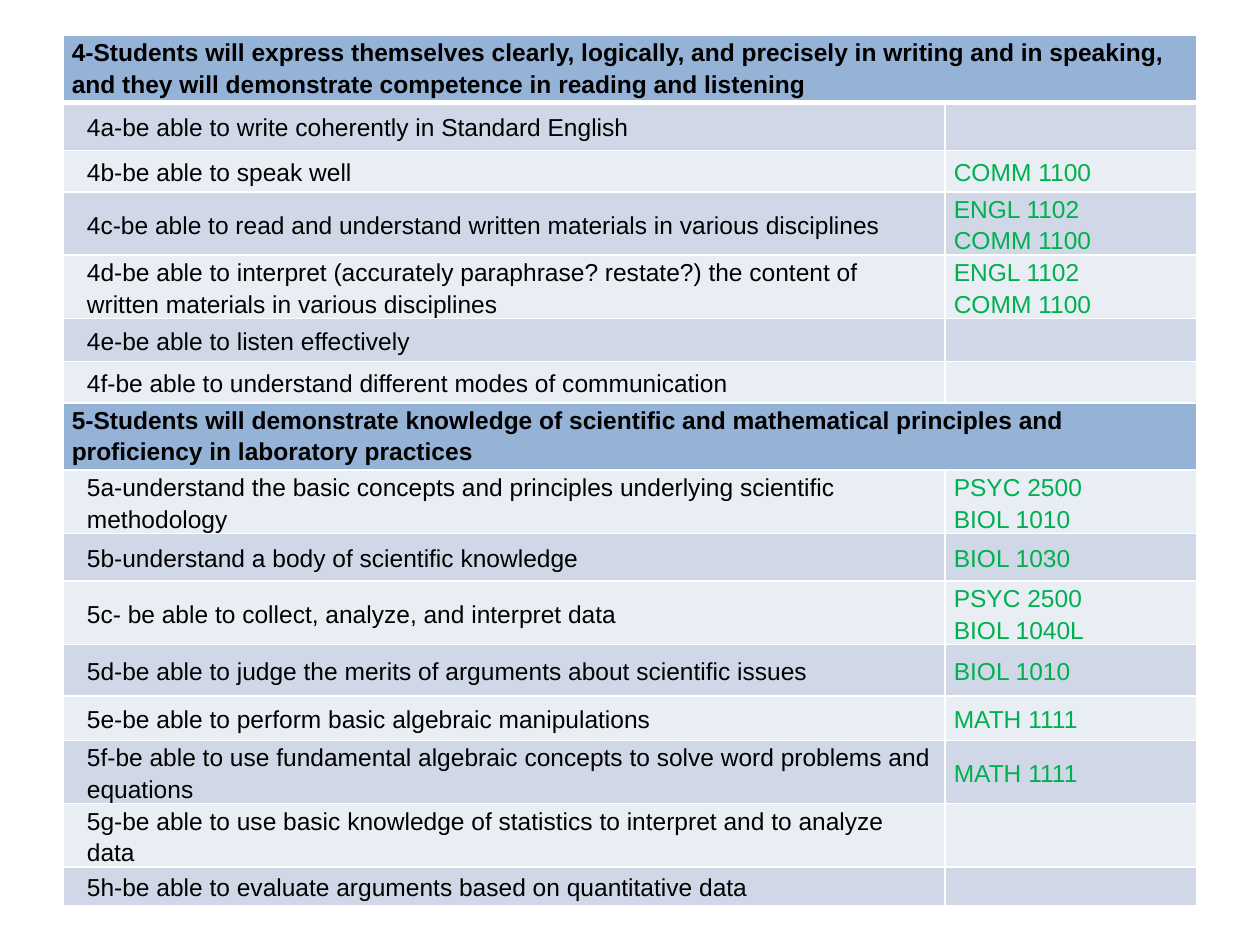
from copy import deepcopy
from dataclasses import dataclass

from lxml.etree import SubElement
from pptx import Presentation
from pptx.dml.color import RGBColor as RGB
from pptx.enum.text import MSO_ANCHOR as Anchor
from pptx.oxml.ns import qn
from pptx.table import Table, _Cell as Cell
from pptx.util import Inches, Pt


@dataclass(frozen=True)
class Theme:
    font: str = "Arial"
    size: float = 14
    spacing: float = 1.15
    text: str = "000000"
    course: str = "00B050"
    heading: str = "95B3D7"
    bands: tuple[str, str] = ("E9EDF4", "D0D8E8")
    border: str = "FFFFFF"
    thin: float = 1
    thick: float = 3


@dataclass(frozen=True)
class Outcome:
    height: float
    text: str
    courses: str = ""
    heading: bool = False


THEME = Theme()
COLUMNS = (7, 2)
OUTCOMES = (
    Outcome(0.53, "4-Students will express themselves clearly, logically, and precisely in writing "
            "and in speaking, and they will demonstrate competence in reading and listening", heading=True),
    Outcome(0.38, "4a-be able to write coherently in Standard English"),
    Outcome(0.33, "4b-be able to speak well", "COMM 1100"),
    Outcome(0.41, "4c-be able to read and understand written materials in various disciplines",
            "ENGL 1102\vCOMM 1100"),
    Outcome(0.41, "4d-be able to interpret (accurately paraphrase? restate?) the content of "
            "written materials in various disciplines", "ENGL 1102\vCOMM 1100"),
    Outcome(0.34, "4e-be able to listen effectively"),
    Outcome(0.33, "4f-be able to understand different modes of communication"),
    Outcome(0.53, "5-Students will demonstrate knowledge of scientific and mathematical principles "
            "and proficiency in laboratory practices", heading=True),
    Outcome(0.41, "5a-understand the basic concepts and principles underlying scientific methodology",
            "PSYC 2500\vBIOL 1010"),
    Outcome(0.38, "5b-understand a body of scientific knowledge", "BIOL 1030"),
    Outcome(0.44, "5c- be able to collect, analyze, and interpret data", "PSYC 2500\vBIOL 1040L"),
    Outcome(0.41, "5d-be able to judge the merits of arguments about scientific issues", "BIOL 1010"),
    Outcome(0.35, "5e-be able to perform basic algebraic manipulations", "MATH 1111"),
    Outcome(0.41, "5f-be able to use fundamental algebraic concepts to solve word problems and equations",
            "MATH 1111"),
    Outcome(0.38, "5g-be able to use basic knowledge of statistics to interpret and to analyze data"),
    Outcome(0.25, "5h-be able to evaluate arguments based on quantitative data"),
)


def set_borders(cell: Cell, top: float, bottom: float) -> None:
    tc_pr = cell._tc.get_or_add_tcPr()
    widths = {"L": THEME.thin, "R": THEME.thin, "T": top, "B": bottom}
    for i, (side, width) in enumerate(widths.items()):
        ln = SubElement(tc_pr, qn(f"a:ln{side}"), w=str(Pt(width)))
        fill = SubElement(ln, qn("a:solidFill"))
        SubElement(fill, qn("a:srgbClr"), val=THEME.border)
        tc_pr.insert(i, ln)


def style_cell(cell: Cell, fill: str, bottom: float) -> None:
    cell.fill.solid()
    cell.fill.fore_color.rgb = RGB.from_string(fill)
    cell.vertical_anchor = Anchor.MIDDLE
    cell.margin_left = cell.margin_right = Inches(0.07)
    cell.margin_top = 0
    cell.margin_bottom = Inches(bottom)


def write_cell(cell: Cell, text: str, color: str, bold: bool = False, indent: float = 0) -> None:
    tf = cell.text_frame
    tf.text = text
    p = tf.paragraphs[0]
    p.line_spacing = THEME.spacing
    if indent:
        p_pr = p._p.get_or_add_pPr()
        p_pr.set("marL", str(Inches(indent)))
        p_pr.set("indent", "0")
    for r in p.runs:
        r.font.name = THEME.font
        r.font.size = Pt(THEME.size)
        r.font.bold = bold
        r.font.color.rgb = RGB.from_string(color)
    for br in p._p.findall(qn("a:br")):
        br.append(deepcopy(p.runs[0]._r.rPr))


def fill_row(table: Table, i: int, outcome: Outcome) -> None:
    table.rows[i].height = Inches(outcome.height)
    label, courses = table.cell(i, 0), table.cell(i, 1)
    fill = THEME.heading if outcome.heading else THEME.bands[i % 2]
    for cell in (label, courses):
        style_cell(cell, fill, 0.03 if outcome.heading else 0)
        set_borders(cell, THEME.thick if i == 1 else THEME.thin,
                    THEME.thick if i == 0 else THEME.thin)
    if outcome.heading:
        label.merge(courses)
    write_cell(label, outcome.text, THEME.text, outcome.heading, 0 if outcome.heading else 0.12)
    if outcome.courses:
        write_cell(courses, outcome.courses, THEME.course)


def main() -> None:
    prs = Presentation()
    prs.slide_width, prs.slide_height = Inches(10), Inches(7.5)
    s = prs.slides.add_slide(prs.slide_layouts[6])
    frame = s.shapes.add_table(len(OUTCOMES), len(COLUMNS),
                               Inches(0.5), Inches(0.28), Inches(9), Inches(7))
    table = frame.table
    for column, width in zip(table.columns, COLUMNS):
        column.width = Inches(width)
    for i, outcome in enumerate(OUTCOMES):
        fill_row(table, i, outcome)
    frame.height = Inches(7)
    prs.save("out.pptx")


if __name__ == "__main__":
    main()
